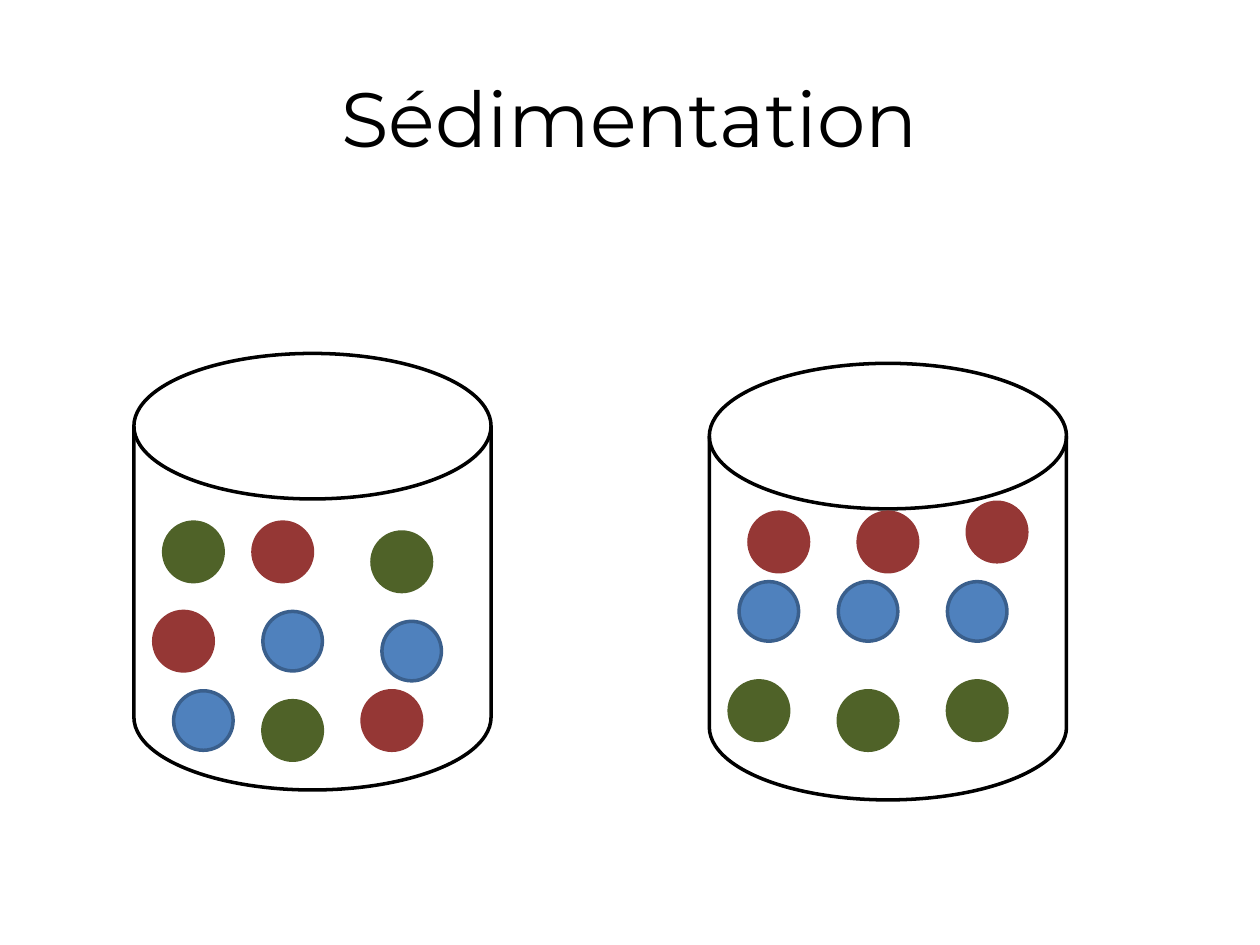
import dataclasses

import pptx
import pptx.dml.color
import pptx.enum.shapes
import pptx.enum.text
import pptx.util

KIND = pptx.enum.shapes.MSO_SHAPE


@dataclasses.dataclass(frozen=True)
class Theme:
    font: str = "Montserrat"
    title: int = 44
    stroke: int = 2
    black: str = "000000"
    white: str = "FFFFFF"
    # Each grain has a fill and a line colour.
    green: tuple = ("4F6228", "4F6228")
    blue: tuple = ("4F81BD", "3A5F8C")
    red: tuple = ("953735", "953735")


class Deck:
    COLS = 127  # square grid cells across the slide width
    JAR = (36, 44)
    GRAIN = 6

    def __init__(self, theme):
        self.theme = theme
        self.prs = pptx.Presentation()
        self.prs.slide_width = pptx.util.Inches(10)
        self.prs.slide_height = pptx.util.Inches(7.5)
        self.cell = self.prs.slide_width / self.COLS
        self.slide = self.prs.slides.add_slide(self.prs.slide_layouts[6])

    def title(self, text, left, top, width, height):
        """Add a centred heading; lengths are shares of the slide's size."""
        wide, high = self.prs.slide_width, self.prs.slide_height
        box = self.slide.shapes.add_textbox(
            int(left * wide), int(top * high), int(width * wide), int(height * high))
        frame = box.text_frame
        frame.word_wrap = True
        frame.vertical_anchor = pptx.enum.text.MSO_ANCHOR.MIDDLE
        para = frame.paragraphs[0]
        para.text = text
        para.alignment = pptx.enum.text.PP_ALIGN.CENTER
        para.font.name = self.theme.font
        para.font.size = pptx.util.Pt(self.theme.title)
        para.font.color.rgb = pptx.dml.color.RGBColor.from_string(self.theme.black)

    def shape(self, kind, col, row, cols, rows, fill, line):
        box = [round(n * self.cell) for n in (col, row, cols, rows)]
        item = self.slide.shapes.add_shape(kind, *box)
        item.shadow.inherit = False
        item.fill.solid()
        item.fill.fore_color.rgb = pptx.dml.color.RGBColor.from_string(fill)
        item.line.color.rgb = pptx.dml.color.RGBColor.from_string(line)
        item.line.width = pptx.util.Pt(self.theme.stroke)

    def jar(self, col, row, grains):
        """Add a jar and its grains, placed in cells from the jar's corner."""
        self.shape(KIND.FLOWCHART_MAGNETIC_DISK, col, row, *self.JAR,
                   self.theme.white, self.theme.black)
        for tint, spots in grains:
            for right, down in spots:
                self.shape(KIND.OVAL, col + right, row + down,
                           self.GRAIN, self.GRAIN, *tint)


def main():
    theme = Theme()
    deck = Deck(theme)
    deck.title("Sédimentation", 0.05, 0.04, 0.9, 1 / 6)
    mixed = [
        (theme.green, [(3, 17), (13, 35), (24, 18)]),
        (theme.blue, [(13, 26), (4, 34), (25, 27)]),
        (theme.red, [(23, 34), (2, 26), (12, 17)]),
    ]
    settled = [
        (theme.green, [(2, 32), (13, 33), (24, 32)]),
        (theme.blue, [(3, 22), (13, 22), (24, 22)]),
        (theme.red, [(4, 15), (15, 15), (26, 14)]),
    ]
    deck.jar(13.5, 35.63, mixed)
    deck.jar(71.5, 36.63, settled)
    deck.prs.save("out.pptx")


if __name__ == "__main__":
    main()
